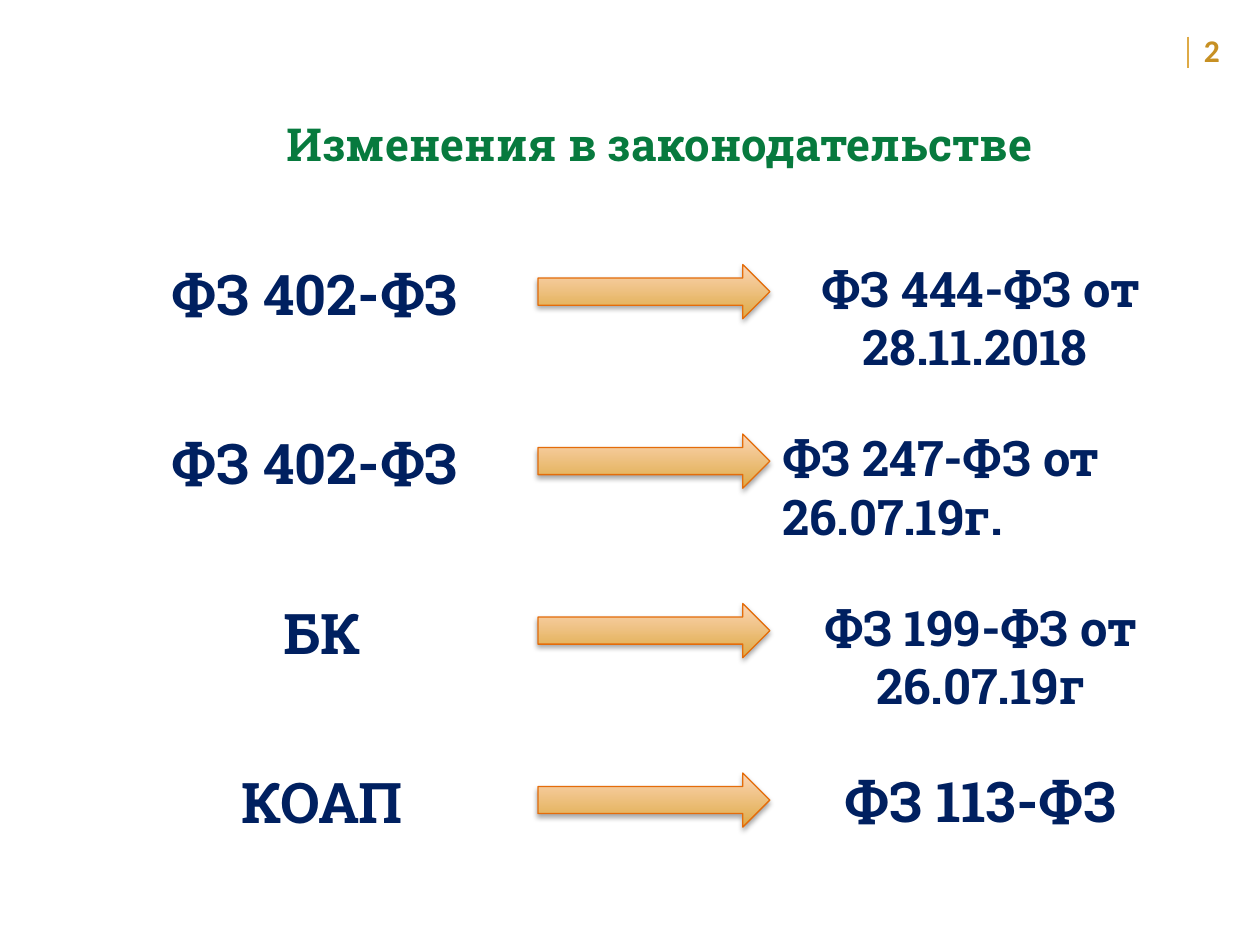
from lxml import etree
from pptx import Presentation
from pptx.dml.color import RGBColor
from pptx.enum.shapes import MSO_CONNECTOR, MSO_SHAPE
from pptx.enum.text import MSO_AUTO_SIZE, PP_ALIGN
from pptx.oxml import parse_xml
from pptx.oxml.ns import nsdecls, qn
from pptx.util import Inches, Pt

LEFT, CENTER = PP_ALIGN.LEFT, PP_ALIGN.CENTER
RIGHT_ARROW = MSO_SHAPE.RIGHT_ARROW
STRAIGHT = MSO_CONNECTOR.STRAIGHT
FIT_SHAPE, FIT_NONE = MSO_AUTO_SIZE.SHAPE_TO_FIT_TEXT, MSO_AUTO_SIZE.NONE

COLORS = {
    "title": "077A3E",
    "text": "002060",
    "number": "C79023",
    "gold": "DEAA46",
    "peach": "FCD5B5",
    "outline": "E46C0A",
    "shadow": "000000",
}
HEADING_FONT, NUMBER_FONT = "Roboto Slab", "Calibri"

# Old law, amending law, size, alignment and indent of the amending law
CHANGES = [
    ("ФЗ 402-ФЗ ", "ФЗ 444-ФЗ от 28.11.2018 ", 28, CENTER, 0.06),
    ("ФЗ 402-ФЗ ", "ФЗ 247-ФЗ от 26.07.19г.", 28, LEFT, 0),
    ("БК", "ФЗ 199-ФЗ от 26.07.19г", 28, CENTER, 0.06),
    ("КОАП", "ФЗ 113-ФЗ", 32, CENTER, 0.06),
]
FIRST_TOP, ROW_STEP = 2, 1.345


def rgb(name):
    return RGBColor.from_string(COLORS[name])


class SlideBuilder:
    def __init__(self, slide):
        self.slide = slide

    def text(self, box, text, size, color, align=LEFT, indent=0,
             font=HEADING_FONT, fit=FIT_SHAPE, shapes=None):
        shapes = self.slide.shapes if shapes is None else shapes
        shape = shapes.add_textbox(*map(Inches, box))
        frame = shape.text_frame
        frame.word_wrap = True
        frame.auto_size = fit
        paragraph = frame.paragraphs[0]
        paragraph.alignment = align
        properties = paragraph._p.get_or_add_pPr()
        properties.set("marL", str(Inches(indent)))
        properties.set("indent", "0")
        run = paragraph.add_run()
        run.text = text
        run.font.name = font
        run.font.size = Pt(size)
        run.font.bold = True
        run.font.color.rgb = rgb(color)

    def arrow(self, box, shapes):
        shape = shapes.add_shape(RIGHT_ARROW, *map(Inches, box))
        shape.fill.gradient()
        shape.fill.gradient_angle = 90
        for stop, color, position in zip(shape.fill.gradient_stops,
                                         ("gold", "peach"), (0, 1)):
            stop.color.rgb = rgb(color)
            stop.position = position
        shape.line.color.rgb = rgb("outline")
        shape.line.width = Pt(0.75)
        shape.shadow.inherit = False
        effects = shape._element.spPr.find(qn("a:effectLst"))
        effects.append(parse_xml(
            f'<a:outerShdw {nsdecls("a")} blurRad="{Pt(3.1)}" dist="{Pt(1.8)}" '
            f'dir="5400000" rotWithShape="0"><a:srgbClr val="{COLORS["shadow"]}">'
            '<a:alpha val="35000"/></a:srgbClr></a:outerShdw>'))

    def line(self, start, end, color, width):
        connector = self.slide.shapes.add_connector(
            STRAIGHT, *map(Inches, (*start, *end)))
        connector.line.color.rgb = rgb(color)
        connector.line.width = Pt(width)
        etree.SubElement(connector._element.spPr, qn("a:effectLst"))

    def change(self, top, old, new, size, align, indent):
        """Group an old law, an arrow and the law that amends it."""
        shapes = self.slide.shapes.add_group_shape().shapes
        self.text((0.34, top + 0.01, 3.93, 0.64), old, 32, "text",
                  CENTER, 0.5, shapes=shapes)
        self.arrow((4.27, top + 0.1, 1.84, 0.43), shapes)
        height = 0.64 if size == 32 else 1.04
        self.text((6.11, top, 3.29, height), new, size, "text",
                  align, indent, shapes=shapes)


def main():
    presentation = Presentation()
    presentation.slide_width = Inches(10)
    presentation.slide_height = Inches(7.5)
    slide = presentation.slides.add_slide(presentation.slide_layouts[6])
    builder = SlideBuilder(slide)

    builder.text((0.16, 0.87, 9.66, 0.54), "Изменения в законодательстве",
                 26, "title", CENTER, 0.5)
    builder.text((9.4, 0.2, 0.42, 0.4), " 2", 18, "number",
                 font=NUMBER_FONT, fit=FIT_NONE)
    for row, change in enumerate(CHANGES):
        builder.change(FIRST_TOP + row * ROW_STEP, *change)
    builder.line((9.43, 0.29), (9.43, 0.54), "gold", 1)

    presentation.save("out.pptx")


if __name__ == "__main__":
    main()
